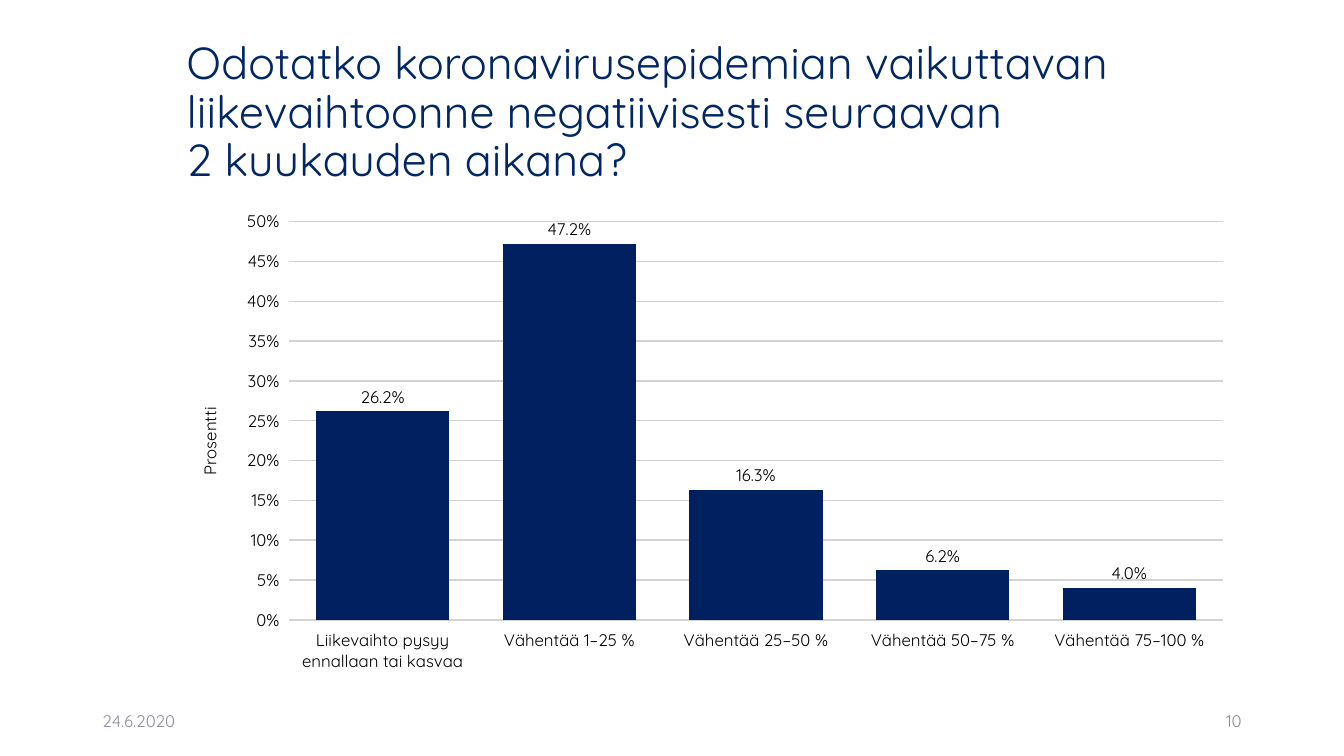
from dataclasses import dataclass

from pptx import Presentation
from pptx.chart.data import CategoryChartData
from pptx.dml.color import RGBColor
from pptx.enum.chart import XL_CHART_TYPE, XL_LABEL_POSITION, XL_TICK_MARK
from pptx.enum.text import MSO_ANCHOR, MSO_AUTO_SIZE, PP_ALIGN
from pptx.util import Cm, Pt

COLUMNS = XL_CHART_TYPE.COLUMN_CLUSTERED
OUTSIDE_END = XL_LABEL_POSITION.OUTSIDE_END
TICK_OUTSIDE = XL_TICK_MARK.OUTSIDE
MIDDLE = MSO_ANCHOR.MIDDLE
NO_AUTOFIT = MSO_AUTO_SIZE.NONE
LEFT, RIGHT = PP_ALIGN.LEFT, PP_ALIGN.RIGHT
TITLE_ONLY = 5


@dataclass(frozen=True)
class Theme:
    font: str = "Quicksand"
    title_size: Pt = Pt(32)
    text_size: Pt = Pt(12)
    title: RGBColor = RGBColor(0x00, 0x26, 0x63)
    footer: RGBColor = RGBColor(0x8C, 0x8E, 0x9F)
    bar: RGBColor = RGBColor(0x00, 0x20, 0x60)
    grid: RGBColor = RGBColor(0xD3, 0xD3, 0xD3)
    text: RGBColor = RGBColor(0x00, 0x00, 0x00)


THEME = Theme()
TITLE = (
    "Odotatko koronavirusepidemian vaikuttavan liikevaihtoonne "
    "negatiivisesti seuraavan \v2 kuukauden aikana?"
)
REVENUE_OUTLOOK = {
    "Liikevaihto pysyy ennallaan tai kasvaa": 0.262,
    "Vähentää 1–25 %": 0.472,
    "Vähentää 25–50 %": 0.163,
    "Vähentää 50–75 %": 0.062,
    "Vähentää 75–100 %": 0.04,
}


def style_font(font, size, color):
    font.name = THEME.font
    font.size = size
    font.color.rgb = color


def add_title(slide, left, top, width, height):
    title = slide.shapes.title
    title.left, title.top, title.width, title.height = left, top, width, height
    frame = title.text_frame
    frame.text = TITLE
    frame.word_wrap = True
    frame.auto_size = NO_AUTOFIT
    frame.vertical_anchor = MIDDLE
    paragraph = frame.paragraphs[0]
    paragraph.alignment = LEFT
    paragraph.line_spacing = 0.9
    style_font(paragraph.font, THEME.title_size, THEME.title)


def add_outlook_chart(slide, left, top, width, height):
    data = CategoryChartData(number_format="0.0%")
    data.categories = REVENUE_OUTLOOK.keys()
    data.add_series("Series 1", REVENUE_OUTLOOK.values())
    chart = slide.shapes.add_chart(COLUMNS, left, top, width, height, data).chart
    chart.has_legend = False
    chart.has_title = False
    style_font(chart.font, THEME.text_size, THEME.text)
    style_axes(chart)
    style_columns(chart.plots[0])


def style_axes(chart):
    for axis in (chart.category_axis, chart.value_axis):
        axis.major_tick_mark = TICK_OUTSIDE
        axis.format.line.fill.background()
        style_font(axis.tick_labels.font, THEME.text_size, THEME.text)

    percent_axis = chart.value_axis
    percent_axis.minimum_scale = 0
    percent_axis.maximum_scale = 0.5
    percent_axis.major_unit = 0.05
    percent_axis.tick_labels.number_format = "0%"
    percent_axis.tick_labels.number_format_is_linked = False
    grid_line = percent_axis.major_gridlines.format.line
    grid_line.color.rgb = THEME.grid
    grid_line.width = Pt(1)

    title_frame = percent_axis.axis_title.text_frame
    title_frame.text = "Prosentti"
    title_font = title_frame.paragraphs[0].font
    style_font(title_font, THEME.text_size, THEME.text)
    title_font.bold = False


def style_columns(plot):
    plot.gap_width = 40
    plot.vary_by_categories = False
    fill = plot.series[0].format.fill
    fill.solid()
    fill.fore_color.rgb = THEME.bar
    plot.has_data_labels = True
    labels = plot.data_labels
    labels.show_value = True
    labels.position = OUTSIDE_END
    labels.number_format = "0.0%"
    labels.number_format_is_linked = False
    style_font(labels.font, THEME.text_size, THEME.text)


def add_footer(slide, left, top, width, height):
    """Place the date at the left end of the box and the page number at the right."""
    part_width = Cm(7.62)
    parts = (
        ("24.6.2020", left, LEFT),
        ("10", left + width - part_width, RIGHT),
    )
    for text, part_left, alignment in parts:
        frame = slide.shapes.add_textbox(part_left, top, part_width, height).text_frame
        frame.text = text
        frame.word_wrap = True
        frame.vertical_anchor = MIDDLE
        paragraph = frame.paragraphs[0]
        paragraph.alignment = alignment
        style_font(paragraph.font, THEME.text_size, THEME.footer)


def main():
    presentation = Presentation()
    presentation.slide_width = Cm(33.87)
    presentation.slide_height = Cm(19.05)
    slide = presentation.slides.add_slide(presentation.slide_layouts[TITLE_ONLY])
    content_left, content_width = Cm(4.45), Cm(26.9)
    add_title(slide, content_left, Cm(1.02), content_width, Cm(3.68))
    add_outlook_chart(slide, content_left, Cm(5.08), content_width, Cm(12.09))
    add_footer(slide, Cm(2.33), Cm(17.66), Cm(29.21), Cm(1.01))
    presentation.save("out.pptx")


if __name__ == "__main__":
    main()
